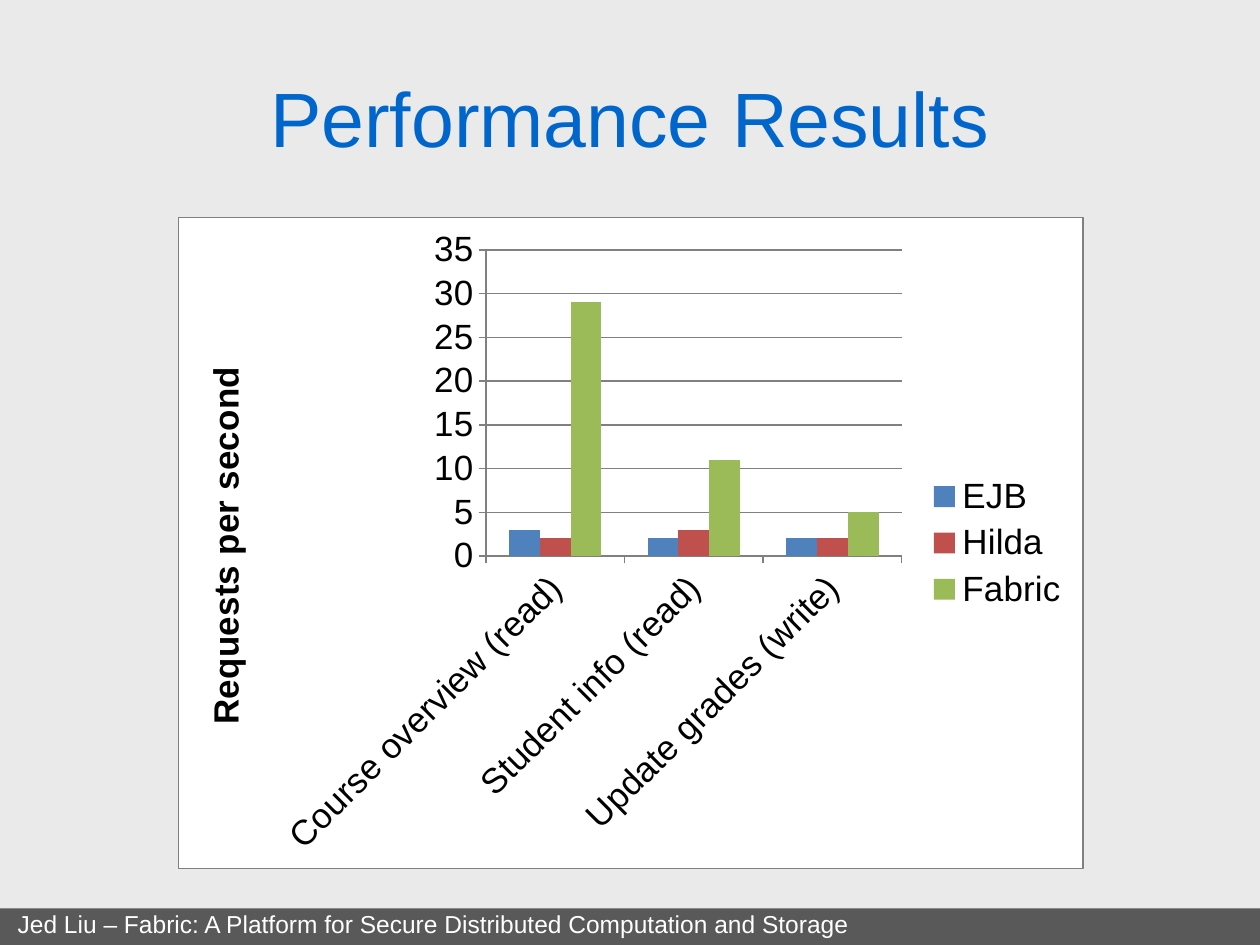
from dataclasses import dataclass

from lxml import etree
from pptx import Presentation
from pptx import oxml
from pptx.chart import data as chart_data
from pptx.dml.color import RGBColor
from pptx.enum import chart as ce, shapes, text
from pptx.oxml import ns
from pptx.util import Inches, Pt

FONT = "Arial"
BACKGROUND = RGBColor(0xEA, 0xEA, 0xEA)
TITLE_BLUE = RGBColor(0x00, 0x66, 0xCC)
FOOTER_GRAY = RGBColor(0x59, 0x59, 0x59)
LINE_GRAY = RGBColor(0x80, 0x80, 0x80)
WHITE = RGBColor(0xFF, 0xFF, 0xFF)
BLACK = RGBColor(0x00, 0x00, 0x00)
CATEGORIES = ["Course overview (read)", "Student info (read)", "Update grades (write)"]


@dataclass
class System:
    name: str
    rates: tuple[int, ...]
    color: RGBColor


SYSTEMS = [
    System("EJB", (3, 2, 2), RGBColor(0x4F, 0x81, 0xBD)),
    System("Hilda", (2, 3, 2), RGBColor(0xC0, 0x50, 0x4D)),
    System("Fabric", (29, 11, 5), RGBColor(0x9B, 0xBB, 0x59)),
]


def set_font(font, size: float, color: RGBColor, bold: bool = False) -> None:
    font.name = FONT
    font.size = Pt(size)
    font.bold = bold
    font.color.rgb = color


def set_layout(parent, index: int, **places: float) -> None:
    for old in parent.findall(ns.qn("c:layout")):
        parent.remove(old)
    layout = etree.Element(ns.qn("c:layout"))
    manual = etree.SubElement(layout, ns.qn("c:manualLayout"))
    settings = {"xMode": "edge", "yMode": "edge", **places}
    if "w" in places:
        settings = {"layoutTarget": "inner", **settings}
    for tag, value in settings.items():
        etree.SubElement(manual, ns.qn(f"c:{tag}")).set("val", str(value))
    parent.insert(index, layout)


def add_title(page) -> None:
    box = page.shapes.add_textbox(Inches(0.5), Inches(0.3), Inches(9), Inches(1.25))
    frame = box.text_frame
    frame.word_wrap = True
    frame.vertical_anchor = text.MSO_ANCHOR.MIDDLE
    para = frame.paragraphs[0]
    para.text = "Performance Results"
    para.alignment = text.PP_ALIGN.CENTER
    set_font(para.font, 44, TITLE_BLUE)


def add_footer(page) -> None:
    bar = page.shapes.add_shape(
        shapes.MSO_SHAPE.RECTANGLE, 0, Inches(7.21), Inches(10), Inches(0.29)
    )
    bar.shadow.inherit = False
    bar.fill.solid()
    bar.fill.fore_color.rgb = FOOTER_GRAY
    bar.line.fill.background()
    frame = bar.text_frame
    frame.word_wrap = True
    frame.vertical_anchor = text.MSO_ANCHOR.BOTTOM
    frame.margin_left = Inches(0.14)
    para = frame.paragraphs[0]
    para.text = "Jed Liu – Fabric: A Platform for Secure Distributed Computation and Storage"
    para.alignment = text.PP_ALIGN.LEFT
    set_font(para.font, 14, WHITE)


def style_axis(axis) -> None:
    set_font(axis.tick_labels.font, 20, BLACK)
    axis.major_tick_mark = ce.XL_TICK_MARK.OUTSIDE
    axis.format.line.color.rgb = LINE_GRAY
    axis.format.line.width = Pt(0.75)


def add_frame(chart) -> None:
    frame = oxml.parse_xml(
        f'<c:spPr {ns.nsdecls("c", "a")}>'
        f'<a:solidFill><a:srgbClr val="{WHITE}"/></a:solidFill>'
        f'<a:ln w="{Pt(1)}"><a:solidFill><a:srgbClr val="{LINE_GRAY}"/></a:solidFill></a:ln>'
        "</c:spPr>"
    )
    chart.element.find(ns.qn("c:chart")).addnext(frame)


def add_results_chart(page) -> None:
    results = chart_data.CategoryChartData()
    results.categories = CATEGORIES
    for system in SYSTEMS:
        results.add_series(system.name, system.rates)
    chart = page.shapes.add_chart(
        ce.XL_CHART_TYPE.COLUMN_CLUSTERED,
        Inches(1.41), Inches(1.72), Inches(7.19), Inches(5.18), results,
    ).chart
    set_font(chart.font, 18, BLACK)
    chart.has_title = False
    chart.has_legend = True
    chart.legend.position = ce.XL_LEGEND_POSITION.RIGHT
    chart.legend.include_in_layout = False
    set_font(chart.legend.font, 20, BLACK)

    plot = chart.plots[0]
    plot.vary_by_categories = False
    plot.gap_width = 150
    plot.overlap = 0
    for series, system in zip(plot.series, SYSTEMS):
        series.format.fill.solid()
        series.format.fill.fore_color.rgb = system.color

    for axis in (chart.category_axis, chart.value_axis):
        style_axis(axis)
    category_axis = chart.element.find(f".//{ns.qn('c:catAx')}")
    label_body = category_axis.find(f"{ns.qn('c:txPr')}/{ns.qn('a:bodyPr')}")
    label_body.set("rot", "-2700000")

    rates = chart.value_axis
    rates.minimum_scale, rates.maximum_scale, rates.major_unit = 0, 35, 5
    rates.has_major_gridlines = True
    rates.major_gridlines.format.line.color.rgb = LINE_GRAY
    rates.major_gridlines.format.line.width = Pt(0.75)
    frame = rates.axis_title.text_frame
    frame.text = "Requests per second"
    set_font(frame.paragraphs[0].font, 20, BLACK, bold=True)
    axis_title = chart.element.find(f".//{ns.qn('c:valAx')}/{ns.qn('c:title')}")
    title_body = axis_title.find(f".//{ns.qn('a:bodyPr')}")
    title_body.set("rot", "-5400000")
    title_body.set("vert", "horz")

    set_layout(axis_title, 1, x=0.02, y=0.22)
    plot_area = chart.element.find(f".//{ns.qn('c:plotArea')}")
    set_layout(plot_area, 0, x=0.34, y=0.05, w=0.46, h=0.47)
    add_frame(chart)


def main() -> None:
    deck = Presentation()
    deck.slide_width, deck.slide_height = Inches(10), Inches(7.5)
    page = deck.slides.add_slide(deck.slide_layouts[6])
    page.background.fill.solid()
    page.background.fill.fore_color.rgb = BACKGROUND
    add_title(page)
    add_footer(page)
    add_results_chart(page)
    deck.save("out.pptx")


if __name__ == "__main__":
    main()
